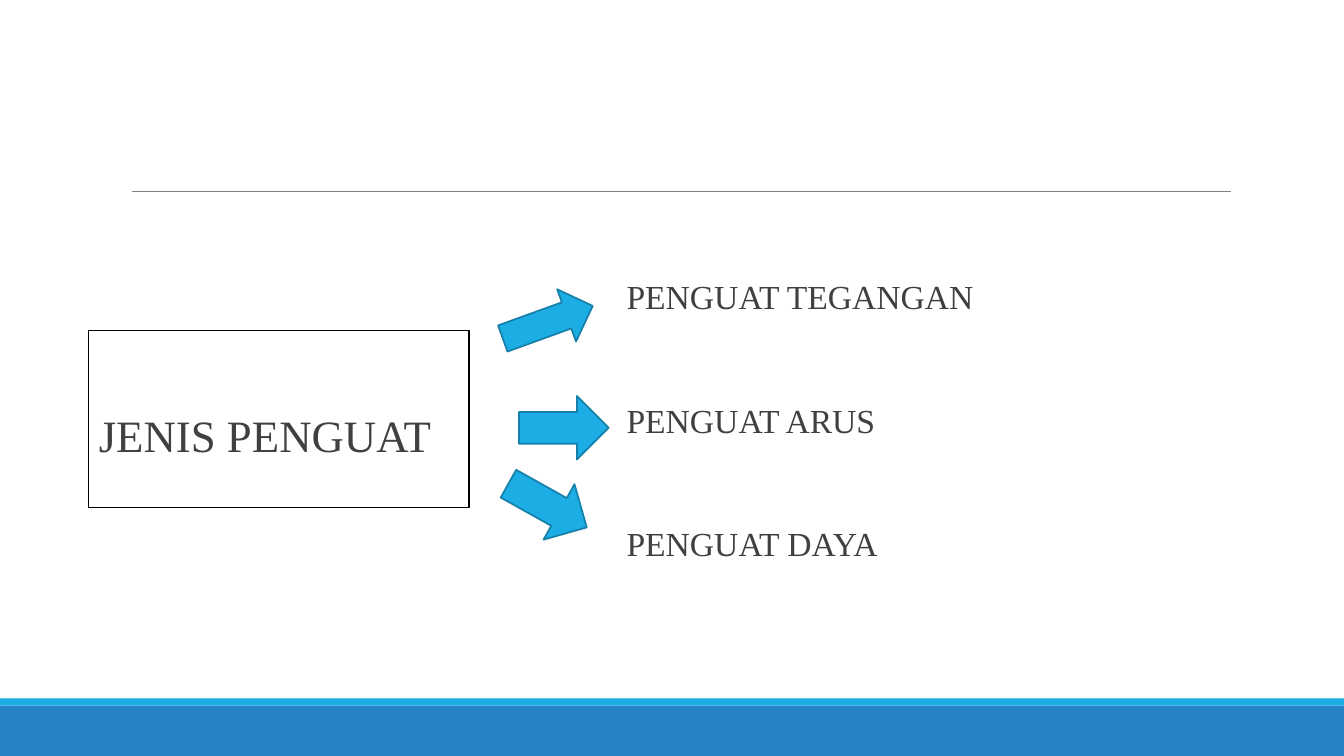
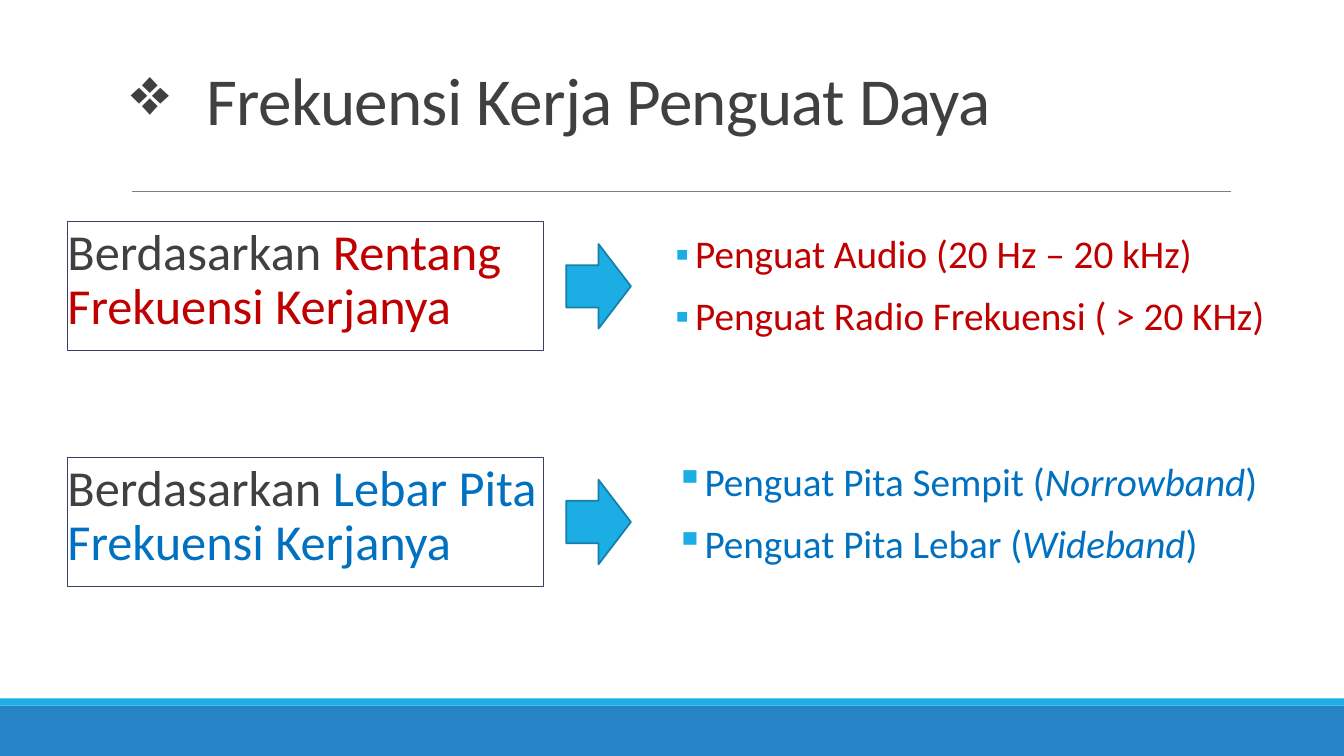
from dataclasses import dataclass

from lxml.etree import SubElement as Sub
from pptx import Presentation
from pptx.dml.color import RGBColor as Rgb
from pptx.enum.shapes import MSO_CONNECTOR as Wire, MSO_SHAPE as Kind
from pptx.enum.text import MSO_ANCHOR as Anchor, MSO_AUTO_SIZE as Auto, PP_ALIGN as Align
from pptx.oxml.ns import qn
from pptx.util import Cm, Pt


@dataclass(frozen=True)
class Theme:
    sans: str = "Calibri"
    serif: str = "Times New Roman"
    ink: str = "404040"
    red: str = "C00000"
    blue: str = "0070C0"
    band: str = "2683C6"
    accent: str = "1CADE4"
    edge: str = "1580A9"
    navy: str = "344068"
    black: str = "000000"
    rule: str = "808080"
    title: int = 48
    topic: int = 36
    kind: int = 32
    item: int = 28
    label: int = 24


LOOK = Theme()
WIDE, HIGH = 33.87, 19.05


def place(shape, box):
    shape.left, shape.top, shape.width, shape.height = map(Cm, box)


def paint(shape, fill=None, line=None, width=0.75):
    if fill:
        shape.fill.solid()
        shape.fill.fore_color.rgb = Rgb.from_string(fill)
    else:
        shape.fill.background()
    if line:
        shape.line.color.rgb = Rgb.from_string(line)
        shape.line.width = Pt(width)
    else:
        shape.line.fill.background()


def draw(slide, kind, box, fill=None, line=None, width=0.75):
    shape = slide.shapes.add_shape(kind, *map(Cm, box))
    shape.shadow.inherit = False
    paint(shape, fill, line, width)
    return shape


def arrow(slide, box, turn=0):
    shape = draw(slide, Kind.RIGHT_ARROW, box, LOOK.accent, LOOK.edge, 1.25)
    shape.rotation = turn


def frame(shape, side=0, top=0.13, anchor=Anchor.TOP):
    text = shape.text_frame
    text.word_wrap = True
    text.auto_size = Auto.NONE
    text.vertical_anchor = anchor
    text.margin_left = text.margin_right = Cm(side)
    text.margin_top, text.margin_bottom = Cm(top), Cm(0.13)
    return text


def space(para, line=0.9, before=12, after=2):
    para.alignment = Align.LEFT
    para.line_spacing = line
    para.space_before, para.space_after = Pt(before), Pt(after)


def bullet(para, sign=None, indent=0.0, tint=None):
    """Hang the text by indent, in cm, behind a sign; no sign means a plain left indent."""
    props = para._p.get_or_add_pPr()
    props.set("marL", str(Cm(indent)))
    props.set("indent", str(-Cm(indent) if sign else 0))
    if tint:
        Sub(Sub(props, qn("a:buClr")), qn("a:srgbClr"), val=tint)
    if sign:
        Sub(props, qn("a:buChar"), char=sign)
    else:
        Sub(props, qn("a:buNone"))


def write(para, parts, size, face):
    """Add one run for each (text, colour, italic) part."""
    for text, tint, slant in parts:
        run = para.add_run()
        run.text = text
        font = run.font
        font.name, font.size, font.italic = face, Pt(size), slant
        font.color.rgb = Rgb.from_string(tint)


def plain(shape, text, size, top):
    para = frame(shape, top=top).paragraphs[0]
    space(para, before=0)
    bullet(para, indent=0.25)
    write(para, [(text, LOOK.ink, False)], size, LOOK.serif)


def textbox(slide, box):
    return slide.shapes.add_textbox(*map(Cm, box))


def dress(slide, master):
    """Draw the bands and the rule, then move them behind the master's placeholders."""
    low = draw(slide, Kind.RECTANGLE, (0, 17.78, WIDE, 1.27), LOOK.band)
    thin = draw(slide, Kind.RECTANGLE, (0, 17.6, WIDE, 0.18), LOOK.accent)
    rule = slide.shapes.add_connector(Wire.STRAIGHT, *map(Cm, (3.33, 4.83, 31.01, 4.83)))
    rule.line.color.rgb = Rgb.from_string(LOOK.rule)
    rule.line.width = Pt(0.5)
    Sub(rule.element.spPr, qn("a:effectLst"))
    tree = master.element.cSld.spTree
    for spot, part in enumerate((low, thin, rule), 2):
        tree.insert(spot, part.element)


def head(slide, text):
    shape = slide.shapes.title
    place(shape, (3.05, 0.79, 27.94, 2.84))
    para = frame(shape, side=0.25, anchor=Anchor.BOTTOM).paragraphs[0]
    space(para, 0.85, 0, 0)
    bullet(para, "❖", 1.9)
    write(para, [(text, LOOK.ink, False)], LOOK.title, LOOK.sans)
    for run in para.runs:
        run._r.get_or_add_rPr().set("spc", "-50")


def kinds(slide, name, labels):
    title = slide.shapes.title.element
    title.getparent().remove(title)
    body = slide.placeholders[1]
    place(body, (2.24, 8.33, 9.58, 4.47))
    paint(body, line=LOOK.black)
    plain(body, name, LOOK.kind, 2.1)
    for row, label in enumerate(labels):
        spot = textbox(slide, (15.54, 6.88 + 3.11 * row, 12.9, 1.3))
        plain(spot, label, LOOK.label, 0.2)
    arrow(slide, (12.6, 7.42, 2.41, 1.4), 340.1)
    arrow(slide, (13.08, 9.98, 2.26, 1.6))
    arrow(slide, (12.67, 11.94, 2.26, 1.6), 29.2)


def listing(shape, items):
    text = frame(shape)
    for row, parts in enumerate(items):
        para = text.add_paragraph() if row else text.paragraphs[0]
        space(para)
        bullet(para, "▪", 0.5, LOOK.accent)
        write(para, parts, LOOK.item, LOOK.sans)


def topic(slide, left, top, text, tint):
    """Draw a framed topic and the arrow to its list."""
    box = draw(slide, Kind.RECTANGLE, (left, top, 12.01, 3.25), line=LOOK.navy)
    para = frame(box).paragraphs[0]
    space(para)
    parts = [("Berdasarkan ", LOOK.ink, False), (text, tint, False)]
    write(para, parts, LOOK.topic, LOOK.sans)
    arrow(slide, (left + 12.57, top + 0.56, 1.63, 2.13))


def ranges(slide):
    head(slide, "Frekuensi Kerja Penguat Daya")
    left, first, second = 1.7, 5.59, 11.53
    red, blue = LOOK.red, LOOK.blue
    size = (15.24, 3.25)

    body = slide.placeholders[1]
    place(body, (left + 15.32, first + 0.2, *size))
    names = ("Penguat Audio (20 Hz – 20 kHz)", "Penguat Radio Frekuensi ( > 20 KHz)")
    listing(body, [[(name, red, False)] for name in names])
    topic(slide, left, first, "Rentang Frekuensi Kerjanya", red)

    pairs = (("Sempit", "Norrowband"), ("Lebar", "Wideband"))
    items = [[(f"Penguat Pita {name} (", blue, False), (term, blue, True), (")", blue, False)]
             for name, term in pairs]
    listing(textbox(slide, (left + 15.32, second, *size)), items)
    topic(slide, left, second, "Lebar Pita Frekuensi Kerjanya", blue)


def main():
    deck = Presentation()
    deck.slide_width, deck.slide_height = Cm(WIDE), Cm(HIGH)
    layout = deck.slide_layouts[1]
    one, two = (deck.slides.add_slide(layout) for _ in range(2))
    dress(one, deck.slide_master)
    kinds(one, "JENIS PENGUAT", ("PENGUAT TEGANGAN", "PENGUAT ARUS", "PENGUAT DAYA"))
    ranges(two)
    deck.save("out.pptx")


if __name__ == "__main__":
    main()
